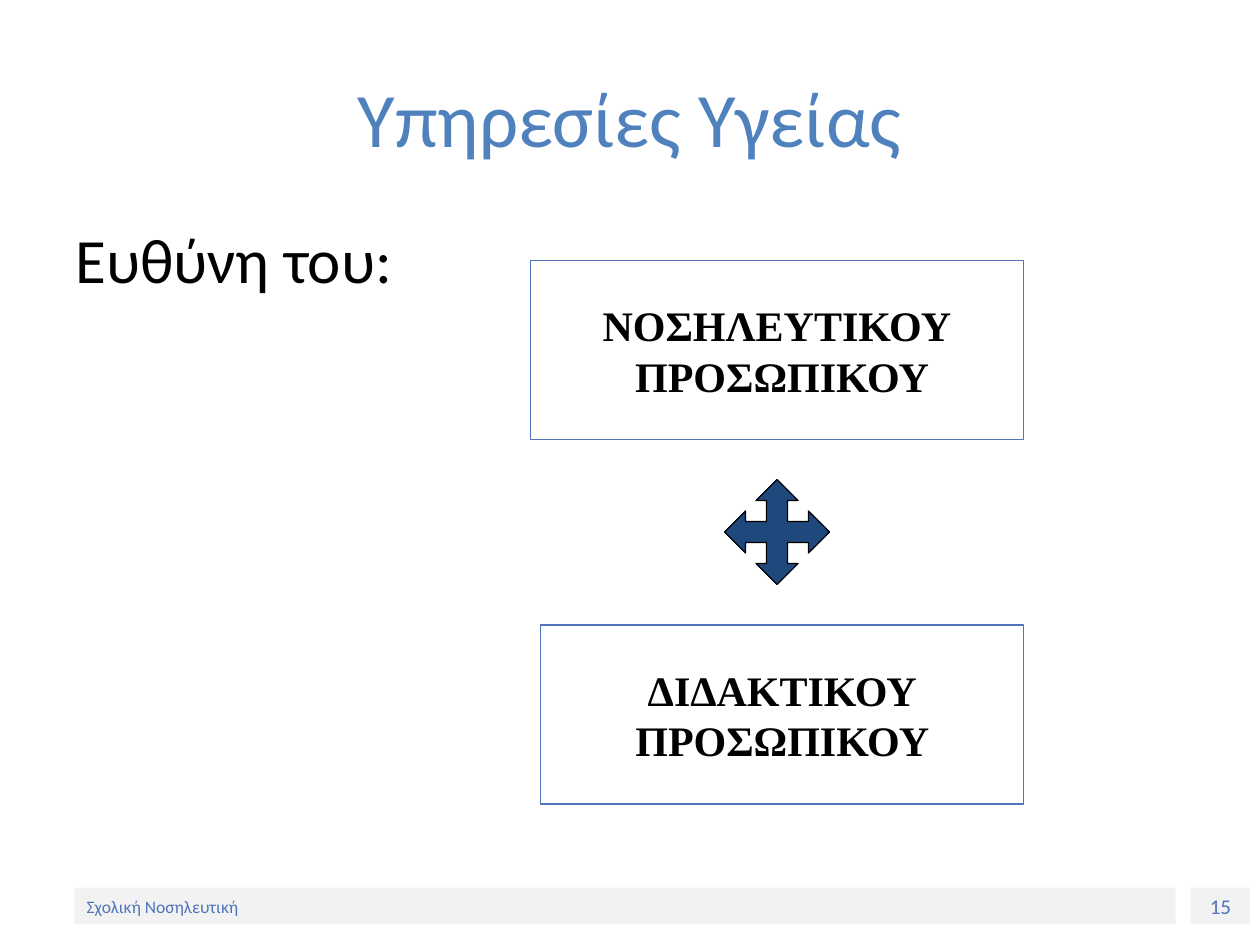
from dataclasses import dataclass
from typing import Optional

from pptx import Presentation
from pptx.dml.color import RGBColor
from pptx.enum.shapes import MSO_SHAPE
from pptx.enum.text import MSO_ANCHOR, PP_ALIGN
from pptx.util import Pt

WHITE = RGBColor(0xFF, 0xFF, 0xFF)
BLACK = RGBColor(0x00, 0x00, 0x00)
LIGHT_GREY = RGBColor(0xF2, 0xF2, 0xF2)
SOFT_BLUE = RGBColor(0x50, 0x75, 0xBC)
TITLE_BLUE = RGBColor(0x4F, 0x81, 0xBD)
DARK_BLUE = RGBColor(0x1F, 0x49, 0x7D)


@dataclass(frozen=True)
class TextBlock:
    lines: tuple[str, ...]
    left: float
    top: float
    width: float
    height: float
    size: float
    color: RGBColor
    font: str = "Calibri"
    bold: bool = False
    alignment: PP_ALIGN = PP_ALIGN.CENTER
    anchor: MSO_ANCHOR = MSO_ANCHOR.MIDDLE
    wrap: bool = True
    space_before: float = 0
    fill: Optional[RGBColor] = None
    line: Optional[RGBColor] = None


def staff_box(lines: tuple[str, ...], left: float, top: float, width: float) -> TextBlock:
    return TextBlock(lines, left, top, width, 102.2, 24, BLACK, font="Times New Roman",
                     bold=True, wrap=False, line=SOFT_BLUE)


BLOCKS = (
    TextBlock(("15",), 680.4, 507.2, 34, 21.1, 12, SOFT_BLUE, fill=LIGHT_GREY),
    TextBlock(("Σχολική Νοσηλευτική",), 42.5, 507.2, 629.3, 21.1, 10, SOFT_BLUE,
              alignment=PP_ALIGN.LEFT, fill=LIGHT_GREY),
    TextBlock(("Ευθύνη του:",), 36, 122.4, 236.9, 362.9, 36, BLACK,
              alignment=PP_ALIGN.LEFT, anchor=MSO_ANCHOR.TOP, space_before=7.2),
    TextBlock(("Υπηρεσίες Υγείας",), 36, 21.6, 648, 90, 44, TITLE_BLUE),
    staff_box(("ΝΟΣΗΛΕΥΤΙΚΟΥ", " ΠΡΟΣΩΠΙΚΟΥ"), 303, 149, 282),
    staff_box(("ΔΙΔΑΚΤΙΚΟΥ", "ΠΡΟΣΩΠΙΚΟΥ"), 309, 357.2, 276),
)


def draw_block(slide, block: TextBlock) -> None:
    bounds = (Pt(block.left), Pt(block.top), Pt(block.width), Pt(block.height))
    if block.fill or block.line:
        shape = slide.shapes.add_shape(MSO_SHAPE.RECTANGLE, *bounds)
        shape.shadow.inherit = False
    else:
        shape = slide.shapes.add_textbox(*bounds)
    if block.fill:
        shape.fill.solid()
        shape.fill.fore_color.rgb = block.fill
    else:
        shape.fill.background()
    if block.line:
        shape.line.color.rgb = block.line
        shape.line.width = Pt(0.75)
    else:
        shape.line.fill.background()

    text_frame = shape.text_frame
    text_frame.word_wrap = block.wrap
    text_frame.vertical_anchor = block.anchor
    text_frame.text = "\n".join(block.lines)
    for paragraph in text_frame.paragraphs:
        paragraph.alignment = block.alignment
        paragraph.space_before = Pt(block.space_before)
        paragraph.font.name = block.font
        paragraph.font.size = Pt(block.size)
        paragraph.font.bold = block.bold
        paragraph.font.color.rgb = block.color


def draw_quad_arrow(slide, left: float, top: float, size: float) -> None:
    arrow = slide.shapes.add_shape(MSO_SHAPE.QUAD_ARROW, Pt(left), Pt(top), Pt(size), Pt(size))
    arrow.shadow.inherit = False
    for index in range(3):
        arrow.adjustments[index] = 0.2
    arrow.fill.solid()
    arrow.fill.fore_color.rgb = DARK_BLUE
    arrow.line.color.rgb = BLACK
    arrow.line.width = Pt(0.75)


def main() -> None:
    presentation = Presentation()
    presentation.slide_width = Pt(720)
    presentation.slide_height = Pt(540)
    slide = presentation.slides.add_slide(presentation.slide_layouts[6])
    slide.background.fill.solid()
    slide.background.fill.fore_color.rgb = WHITE
    for block in BLOCKS:
        draw_block(slide, block)
    draw_quad_arrow(slide, 414, 274, 60)
    presentation.save("out.pptx")


if __name__ == "__main__":
    main()
